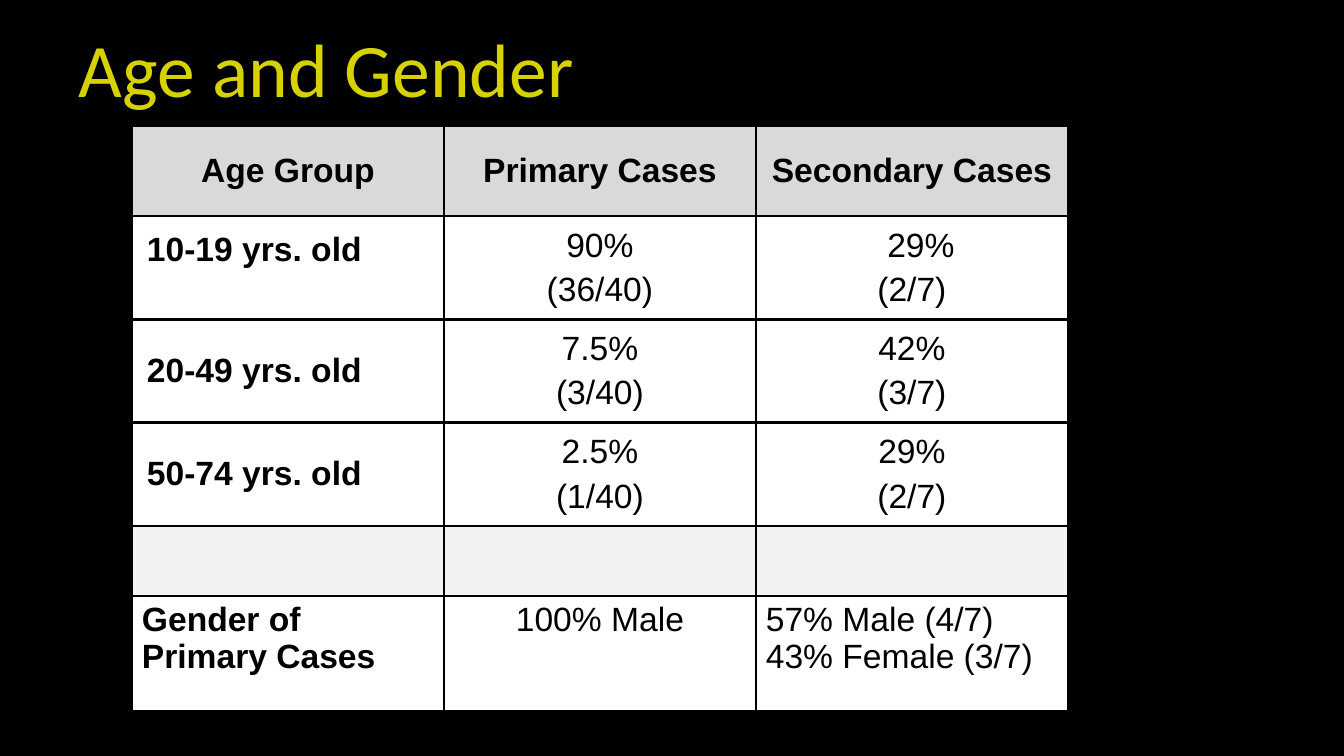
from lxml import etree
from pptx import Presentation
from pptx.dml.color import RGBColor
from pptx.enum.text import MSO_ANCHOR, PP_ALIGN
from pptx.oxml.ns import qn
from pptx.util import Pt

EMU_PER_PX = 12192000 / 1344
MIDDLE, TOP = MSO_ANCHOR.MIDDLE, MSO_ANCHOR.TOP
LEFT, CENTER = PP_ALIGN.LEFT, PP_ALIGN.CENTER
BLACK, WHITE, YELLOW = "000000", "FFFFFF", "D6D100"
HEADER_GRAY, SPACER_GRAY = "D9D9D9", "F2F2F2"


def px(length):
    """Turn pixels into EMU."""
    return round(length * EMU_PER_PX)


def color(value):
    """Turn a hex string into a colour."""
    return RGBColor.from_string(value)


class SlideBuilder:
    """Hold the style and the current slide."""

    title_font, table_font = "Calibri", "Arial"
    title_size, table_size, border_width = 54, 24, 2.25

    def __init__(self, presentation):
        """Add a blank slide with a black background."""
        self.slide = presentation.slides.add_slide(presentation.slide_layouts[6])
        fill = self.slide.background.fill
        fill.solid()
        fill.fore_color.rgb = color(BLACK)

    def style(self, paragraph, font_name, size, hex_color, bold=False):
        """Set the font of a paragraph."""
        font = paragraph.font
        font.name, font.size, font.bold = font_name, Pt(size), bold
        font.color.rgb = color(hex_color)

    def title(self, text, left, top, width, height):
        """Add the slide title."""
        shape = self.slide.shapes.add_textbox(px(left), px(top), px(width), px(height))
        frame = shape.text_frame
        frame.word_wrap = True
        frame.vertical_anchor = MIDDLE
        paragraph = frame.paragraphs[0]
        paragraph.text = text
        paragraph.line_spacing = 0.9
        self.style(paragraph, self.title_font, self.title_size, YELLOW)

    def table(self, left, top, column_widths, row_heights):
        """Add an unstyled table and return it."""
        table = self.slide.shapes.add_table(
            len(row_heights), len(column_widths), px(left), px(top),
            px(sum(column_widths)), px(sum(row_heights))).table
        table.first_row = table.horz_banding = False
        for column, width in zip(table.columns, column_widths):
            column.width = px(width)
        for row, height in zip(table.rows, row_heights):
            row.height = px(height)
        return table

    def cell(self, cell, lines, fill, bold, align, anchor, margins, gap):
        """Fill one table cell with its lines of text."""
        cell.fill.solid()
        cell.fill.fore_color.rgb = color(fill)
        self.borders(cell)
        cell.vertical_anchor = anchor
        cell.margin_left = cell.margin_right = px(margins[0])
        cell.margin_top = cell.margin_bottom = px(margins[1])
        frame = cell.text_frame
        for index, line in enumerate(lines or [""]):
            paragraph = frame.add_paragraph() if index else frame.paragraphs[0]
            paragraph.text = line
            paragraph.alignment = align
            if index:
                paragraph.space_before = Pt(gap)
            self.style(paragraph, self.table_font, self.table_size, BLACK, bold)

    def borders(self, cell):
        """Draw the four borders of a cell."""
        properties = cell._tc.get_or_add_tcPr()
        for index, side in enumerate(("a:lnL", "a:lnR", "a:lnT", "a:lnB")):
            line = etree.Element(qn(side), w=str(Pt(self.border_width)))
            solid = etree.SubElement(line, qn("a:solidFill"))
            etree.SubElement(solid, qn("a:srgbClr"), val=BLACK)
            properties.insert(index, line)


def main():
    """Build the slide and save it."""
    presentation = Presentation()
    presentation.slide_width, presentation.slide_height = px(1344), px(756)
    builder = SlideBuilder(presentation)
    builder.title("Age and Gender", 69, 0, 1159, 146)

    rows = [
        (["Age Group"], ["Primary Cases"], ["Secondary Cases"]),
        (["10-19 yrs. old"], ["90%", "(36/40)"], ["29%", "(2/7)"]),
        (["20-49 yrs. old"], ["7.5%", "(3/40)"], ["42%", "(3/7)"]),
        (["50-74 yrs. old"], ["2.5%", "(1/40)"], ["29%", "(2/7)"]),
        ([], [], []),
        (["Gender of Primary Cases"], ["100% Male"],
         ["57% Male (4/7)", "43% Female (3/7)"]),
    ]
    fills = [HEADER_GRAY, WHITE, WHITE, WHITE, SPACER_GRAY, WHITE]
    table = builder.table(132, 126, [312] * 3, [90, 100, 100, 100, 70, 115])
    gender_row = len(rows) - 1
    for row_index, (row, fill) in enumerate(zip(rows, fills)):
        is_gender = row_index == gender_row
        anchor, margins, gap = (TOP, (10, 5), 0) if is_gender else (MIDDLE, (15, 8), 4.8)
        for column_index, lines in enumerate(row):
            is_header = row_index == 0
            is_left = column_index == 0 or (is_gender and column_index == 2)
            builder.cell(table.cell(row_index, column_index), lines, fill,
                         is_header or column_index == 0,
                         LEFT if is_left and not is_header else CENTER,
                         anchor, margins, gap)

    table.cell(1, 0).margin_bottom = px(44)
    youngest_secondary = table.cell(1, 2).text_frame.paragraphs[0]
    youngest_secondary._p.get_or_add_pPr().set("marL", str(px(18)))
    presentation.save("out.pptx")


if __name__ == "__main__":
    main()
